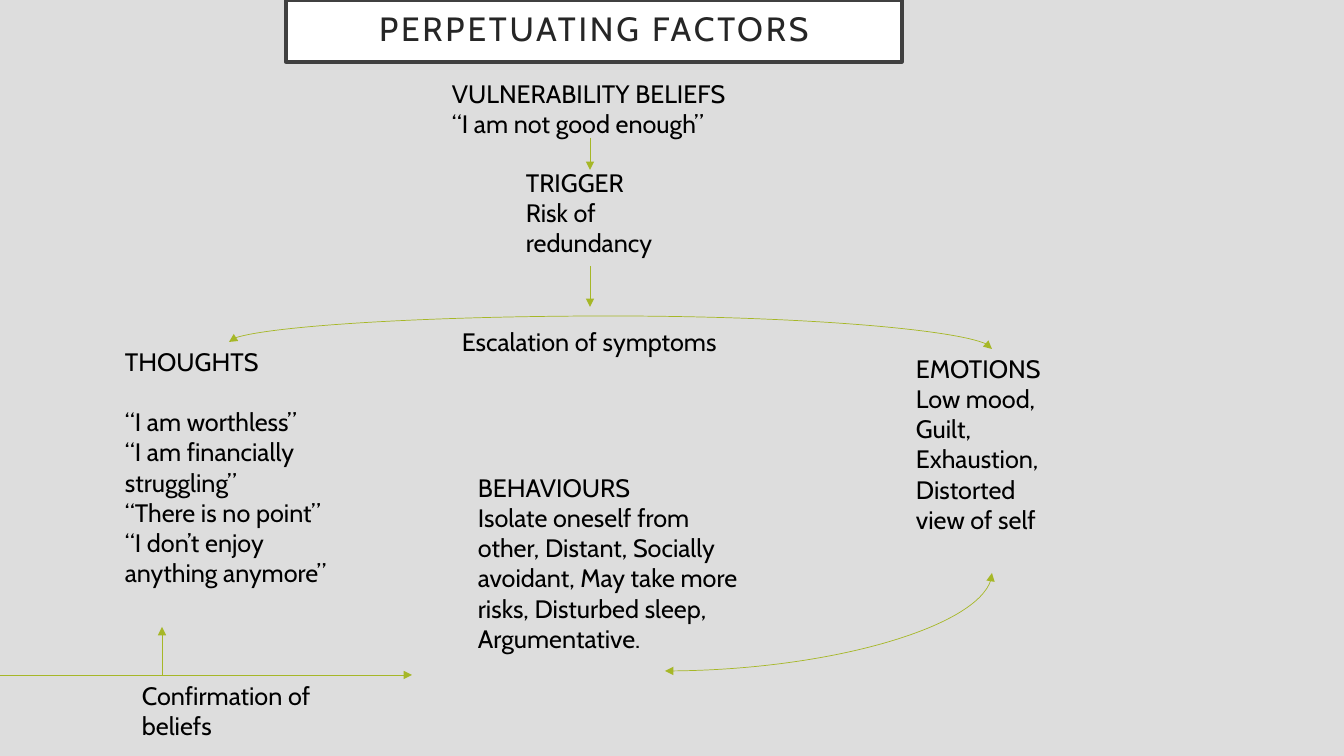
import pptx
import pptx.dml.color
import pptx.enum.shapes
import pptx.enum.text
import pptx.oxml.ns
import pptx.util
from lxml import etree

BACKGROUND = pptx.dml.color.RGBColor(0xDD, 0xDD, 0xDD)
BLACK = pptx.dml.color.RGBColor(0x00, 0x00, 0x00)
WHITE = pptx.dml.color.RGBColor(0xFF, 0xFF, 0xFF)
TITLE_INK = pptx.dml.color.RGBColor(0x26, 0x26, 0x26)
TITLE_BORDER = pptx.dml.color.RGBColor(0x40, 0x40, 0x40)
GREEN = pptx.dml.color.RGBColor(0xA6, 0xB7, 0x27)
FONT = "Cabin"
LINE_PITCH = pptx.util.Pt(21.6)

qn = pptx.oxml.ns.qn
Pt = pptx.util.Pt
CONNECTOR = pptx.enum.shapes.MSO_CONNECTOR


def px(length):
    """Turn px, at 100.8 to the inch, into EMU."""
    return round(length * 914400 / 100.8)


def add_arrow(kind, start, end, ends):
    arrow = page.shapes.add_connector(kind, *map(px, start + end))
    arrow.line.color.rgb = GREEN
    arrow.line.width = Pt(0.5)
    for name in ends:
        etree.SubElement(arrow.line._get_or_add_ln(), qn("a:" + name), type="triangle")
    etree.SubElement(arrow._element.spPr, qn("a:effectLst"))
    return arrow


deck = pptx.Presentation()
deck.slide_width, deck.slide_height = px(1344), px(756)
page = deck.slides.add_slide(deck.slide_layouts[6])
page.background.fill.solid()
page.background.fill.fore_color.rgb = BACKGROUND

# Text blocks: left, top, width, height, paragraphs
blocks = [
    (442, 73, 313, 102, ["VULNERABILITY BELIEFS", "“I am not good enough”"]),
    (516, 162, 187, 102, ["TRIGGER", "Risk of redundancy"]),
    (906, 348, 171, 224,
     ["EMOTIONS", "Low mood, Guilt, Exhaustion,", "Distorted view of self"]),
    (115, 341, 227, 346,
     ["THOUGHTS", "“I am worthless”", "“I am financially struggling”",
      "“There is no point”", "“I don’t enjoy anything anymore”"]),
    (468, 467, 293, 224,
     ["BEHAVIOURS",
      "Isolate oneself from other, Distant, Socially avoidant, "
      "May take more risks, Disturbed sleep,",
      "Argumentative."]),
    (132, 675, 238, 72, ["Confirmation of beliefs"]),
    (452, 321, 277, 40, ["Escalation of symptoms"]),
]
for left, top, width, height, lines in blocks:
    box = page.shapes.add_textbox(px(left), px(top), px(width), px(height))
    frame = box.text_frame
    frame.word_wrap = True
    frame.auto_size = pptx.enum.text.MSO_AUTO_SIZE.SHAPE_TO_FIT_TEXT
    for number, line in enumerate(lines):
        para = frame.add_paragraph() if number else frame.paragraphs[0]
        if number and lines[0] == "THOUGHTS":
            para.space_before = LINE_PITCH if number == 1 else Pt(0)
        span = para.add_run()
        span.text = line
        span.font.name = FONT
        span.font.size = Pt(18)
        span.font.color.rgb = BLACK

# Straight arrows
for start, end in [
    ((0, 675), (412, 675)),
    ((162, 675), (162, 627)),
    ((590, 266), (590, 307)),
    ((590, 138), (590, 170)),
]:
    add_arrow(CONNECTOR.STRAIGHT, start, end, ["tailEnd"])

# Quarter curve between behaviours and emotions
quarter = add_arrow(CONNECTOR.CURVE, (665, 671), (992, 573), ["headEnd", "tailEnd"])
quarter._element.spPr.find(qn("a:prstGeom")).set("prst", "curvedConnector2")

# Arch between thoughts and emotions: an upright curve turned by 270 degrees
arch = add_arrow(CONNECTOR.CURVE, (614, -36), (607, 727), ["headEnd", "tailEnd"])
arch._element.spPr.find(qn("a:xfrm")).set("rot", str(270 * 60000))
adjustments = arch._element.spPr.find(qn("a:prstGeom")).get_or_add_avLst()
etree.SubElement(adjustments, qn("a:gd"), name="adj1", fmla="val -372400")

# Title
title = page.shapes.add_shape(
    pptx.enum.shapes.MSO_SHAPE.RECTANGLE, px(286), px(0), px(616), px(62))
title.shadow.inherit = False
title.fill.solid()
title.fill.fore_color.rgb = WHITE
title.line.color.rgb = TITLE_BORDER
title.line.width = Pt(2.5)
frame = title.text_frame
frame.word_wrap = True
frame.vertical_anchor = pptx.enum.text.MSO_ANCHOR.MIDDLE
frame.margin_left = frame.margin_right = px(20)
frame.margin_top = frame.margin_bottom = px(20)
para = frame.paragraphs[0]
para.alignment = pptx.enum.text.PP_ALIGN.CENTER
para.line_spacing = 0.9
span = para.add_run()
span.text = "PERPETUATING FACTORS"
span.font.name = FONT
span.font.size = Pt(24)
span.font.color.rgb = TITLE_INK
span.font._element.set("spc", "200")

deck.save("out.pptx")
